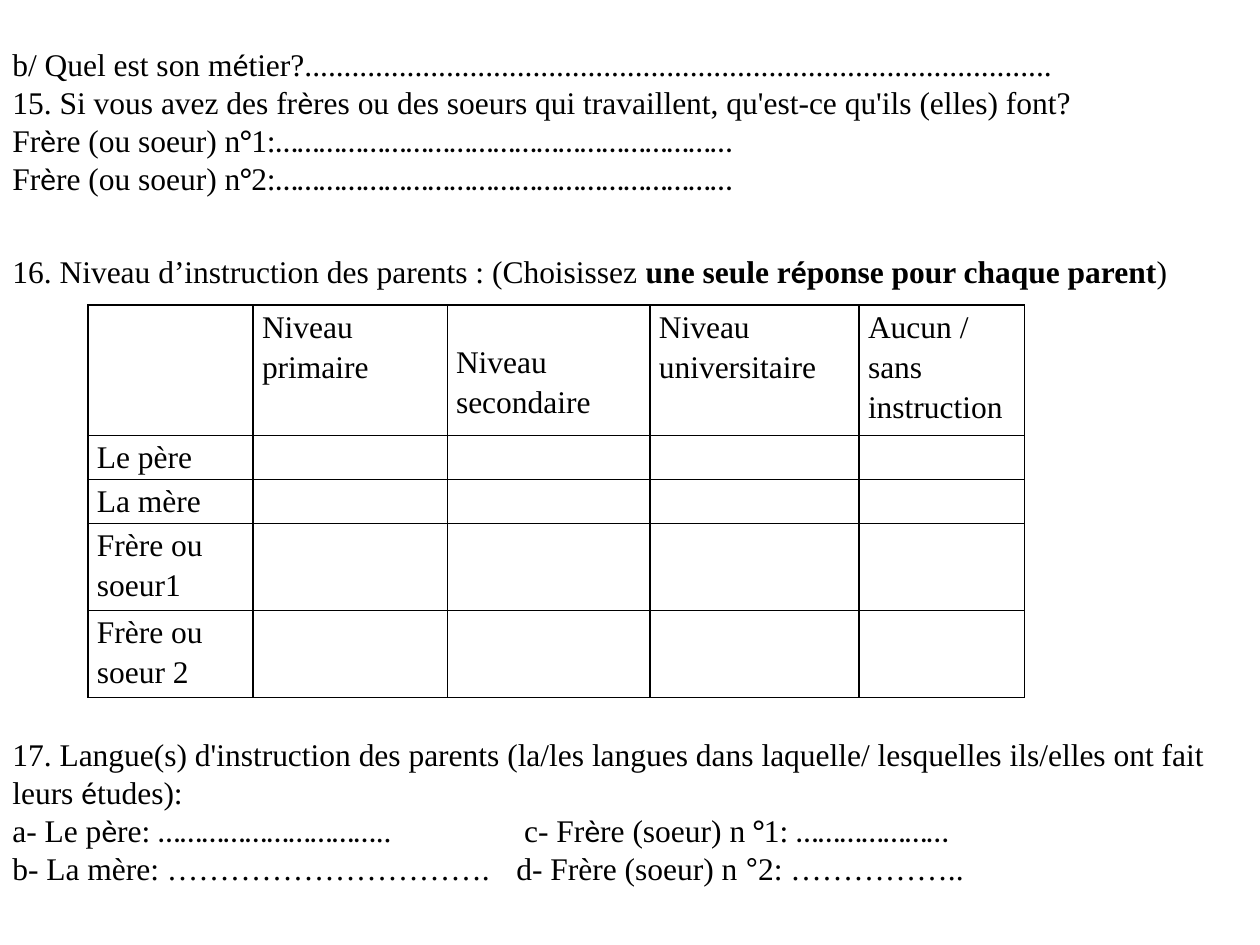
from lxml.etree import SubElement
from pptx import Presentation
from pptx.dml.color import RGBColor
from pptx.enum.text import MSO_ANCHOR
from pptx.oxml.ns import qn
from pptx.util import Inches, Pt

BLACK = RGBColor(0, 0, 0)
DOTS = "…" * 21

ABOVE_TABLE = [
    "b/ Quel est son m|é|tier?" + "." * 95,
    "15. Si vous avez des fr|è|res ou des soeurs qui travaillent, qu'est-ce qu'ils (elles) font?",
    f"Fr|è|re (ou soeur) n|°|1:|{DOTS}",
    f"Fr|è|re (ou soeur) n|°|2:|{DOTS}",
]
BELOW_TABLE = [
    "17. Langue(s) d'instruction des parents (la/les langues dans laquelle/ "
    "lesquelles ils/elles ont fait leurs |é|tudes):",
    "a- Le p|è|re: |…………………………|..\t c- Fr|è|re (soeur) n |°|1: |…………………",
]
LAST_LINE = "b- La mère: …………………………. \td- Frère (soeur) n |°|2: …………….."
HEADERS = [
    [],
    ["Niveau", "primaire"],
    ["Niveau", "secondaire"],
    ["Niveau", "universitaire"],
    ["Aucun / sans instruction"],
]
ROW_LABELS = [["Le père"], ["La mère"], ["Frère ou soeur1"], ["Frère ou", "soeur 2"]]
COLUMN_WIDTHS = [1.31, 1.54, 1.61, 1.66, 1.31]
ROW_HEIGHTS = [1.03, 0.35, 0.35, 0.69, 0.69]


def add_text(frame, lines, accent_font="Calibri", bold=False, spacing=1.0, same_line=False):
    """Write lines in Times New Roman; pieces between bars take accent_font."""
    for line in lines:
        paragraph = frame.paragraphs[-1]
        if paragraph.runs and not same_line:
            paragraph = frame.add_paragraph()
        paragraph.line_spacing = spacing
        for position, piece in enumerate(line.split("|")):
            run = paragraph.add_run()
            run.text = piece
            run.font.name = accent_font if position % 2 else "Times New Roman"
            run.font.size = Pt(18)
            run.font.bold = bold
            run.font.color.rgb = BLACK


def add_text_box(slide, left, top, width, height, wrap=True):
    box = slide.shapes.add_textbox(Inches(left), Inches(top), Inches(width), Inches(height))
    box.text_frame.word_wrap = wrap
    return box.text_frame


presentation = Presentation()
presentation.slide_width = Inches(10)
presentation.slide_height = Inches(7.5)
slide = presentation.slides.add_slide(presentation.slide_layouts[6])

# Questions above the table
add_text(add_text_box(slide, 0, 0.31, 10, 1.62), ABOVE_TABLE)

table_title = add_text_box(slide, 0, 1.95, 9.46, 0.4, wrap=False)
add_text(table_title, ["16. Niveau d’instruction des parents : (Choisissez "])
add_text(table_title, ["une seule r|é|ponse pour chaque parent"], bold=True, same_line=True)
add_text(table_title, [")"], same_line=True)

# Education table
table = slide.shapes.add_table(
    len(ROW_HEIGHTS), len(COLUMN_WIDTHS), Inches(0.7), Inches(2.42),
    Inches(sum(COLUMN_WIDTHS)), Inches(sum(ROW_HEIGHTS)),
).table
table.first_row = False
table.horz_banding = False
for column, width in zip(table.columns, COLUMN_WIDTHS):
    column.width = Inches(width)
for row, height in zip(table.rows, ROW_HEIGHTS):
    row.height = Inches(height)

for cell in table.iter_cells():
    cell.margin_left = cell.margin_right = Inches(0.07)
    cell.margin_top = cell.margin_bottom = 0
    properties = cell._tc.get_or_add_tcPr()
    for side in ("a:lnL", "a:lnR", "a:lnT", "a:lnB"):
        border = SubElement(properties, qn(side), w=str(Pt(1)))
        fill = SubElement(border, qn("a:solidFill"))
        SubElement(fill, qn("a:srgbClr"), val=str(BLACK))
    cell.fill.background()

for column_index, lines in enumerate(HEADERS):
    add_text(table.cell(0, column_index).text_frame, lines, spacing=1.15)
for row_index, lines in enumerate(ROW_LABELS, start=1):
    add_text(table.cell(row_index, 0).text_frame, lines, spacing=1.15)
table.cell(0, 2).margin_top = Inches(0.28)

# Languages question, with the second column of answers on a tab stop
languages = add_text_box(slide, 0, 5.78, 10, 1.31)
languages.vertical_anchor = MSO_ANCHOR.MIDDLE
add_text(languages, BELOW_TABLE)
add_text(languages, [LAST_LINE], accent_font="Arial")
for paragraph in languages.paragraphs[1:]:
    tab_stops = SubElement(paragraph._p.get_or_add_pPr(), qn("a:tabLst"))
    SubElement(tab_stops, qn("a:tab"), pos=str(Inches(4)), algn="l")

presentation.save("out.pptx")
